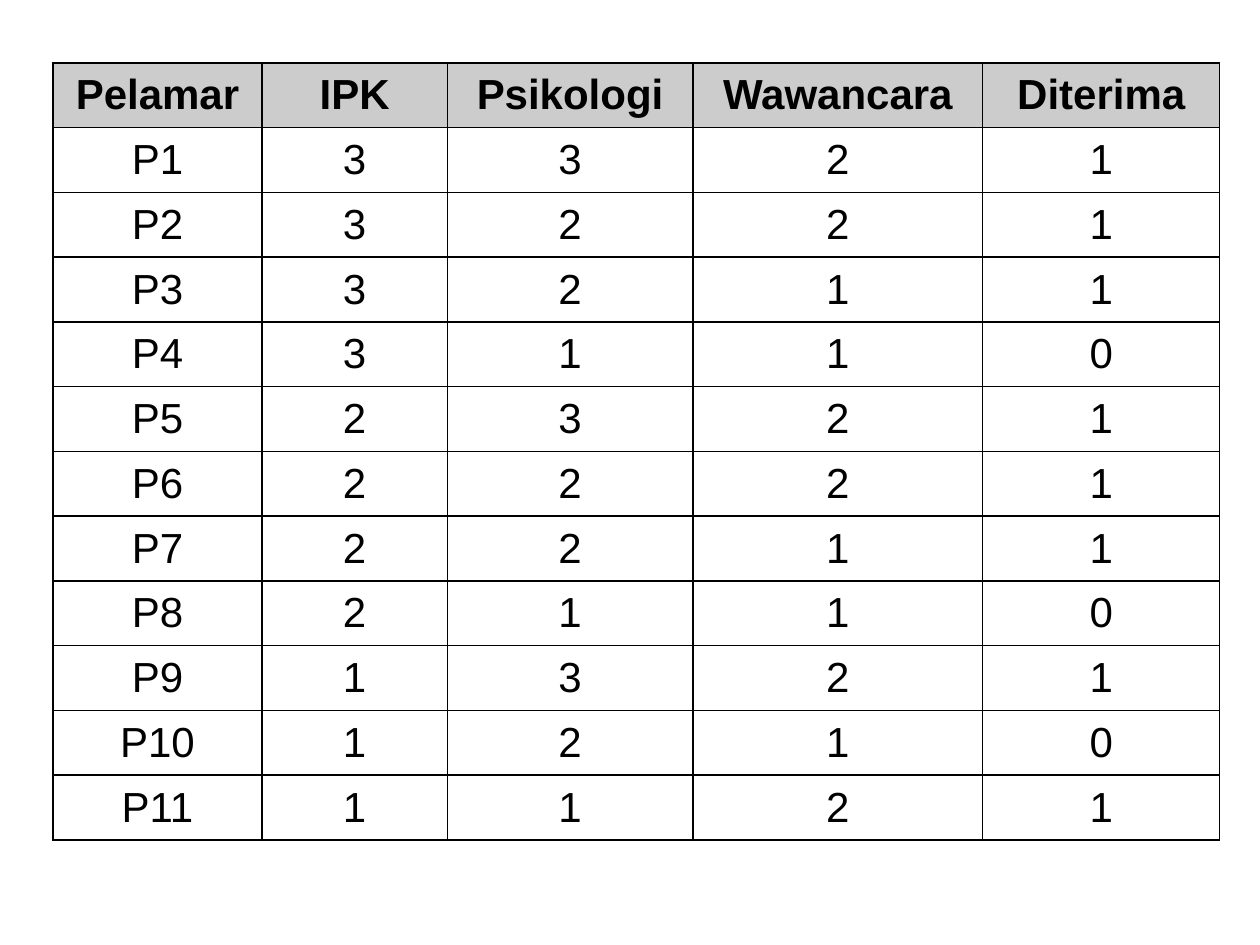
from lxml.etree import SubElement
from pptx import Presentation
from pptx.dml.color import RGBColor
from pptx.enum.text import MSO_ANCHOR, PP_ALIGN
from pptx.oxml.ns import qn
from pptx.util import Inches, Pt

# Content: applicants' scores and the hiring result
HEADER = ("Pelamar", "IPK", "Psikologi", "Wawancara", "Diterima")
SCORES = [
    (3, 3, 2, 1),
    (3, 2, 2, 1),
    (3, 2, 1, 1),
    (3, 1, 1, 0),
    (2, 3, 2, 1),
    (2, 2, 2, 1),
    (2, 2, 1, 1),
    (2, 1, 1, 0),
    (1, 3, 2, 1),
    (1, 2, 1, 0),
    (1, 1, 2, 1),
]
ROWS = [HEADER] + [(f"P{n}", *scores) for n, scores in enumerate(SCORES, 1)]

# Layout in inches
LEFT, TOP, HEIGHT = 0.42, 0.5, 6.17
COL_WIDTHS = (1.66, 1.47, 1.95, 2.3, 1.88)
BLACK, GREY = "000000", "CCCCCC"


def color(value):
    return RGBColor.from_string(value)


def add_borders(cell):
    tc_pr = cell._tc.get_or_add_tcPr()
    for side in ("lnL", "lnR", "lnT", "lnB"):
        ln = SubElement(tc_pr, qn(f"a:{side}"), w=str(Pt(1)))
        fill = SubElement(ln, qn("a:solidFill"))
        SubElement(fill, qn("a:srgbClr"), val=BLACK)


def fill_cell(cell, text, is_header):
    add_borders(cell)
    if is_header:
        cell.fill.solid()
        cell.fill.fore_color.rgb = color(GREY)
    else:
        cell.fill.background()
    cell.vertical_anchor = MSO_ANCHOR.MIDDLE
    cell.margin_left = cell.margin_right = Inches(0.07)
    cell.margin_top = cell.margin_bottom = 0
    p = cell.text_frame.paragraphs[0]
    p.alignment = PP_ALIGN.CENTER
    r = p.add_run()
    r.text = str(text)
    r.font.name = "Arial"
    r.font.size = Pt(24)
    r.font.bold = is_header
    r.font.color.rgb = color(BLACK)


def main():
    prs = Presentation()
    prs.slide_width, prs.slide_height = Inches(10), Inches(7.5)
    slide = prs.slides.add_slide(prs.slide_layouts[6])

    # Table grid: given column widths, equal row heights
    table = slide.shapes.add_table(
        len(ROWS), len(HEADER), Inches(LEFT), Inches(TOP),
        Inches(sum(COL_WIDTHS)), Inches(HEIGHT)).table
    table.horz_banding = False
    for col, width in zip(table.columns, COL_WIDTHS):
        col.width = Inches(width)

    # Cells
    for i, row in enumerate(ROWS):
        table.rows[i].height = Inches(HEIGHT / len(ROWS))
        for j, text in enumerate(row):
            fill_cell(table.cell(i, j), text, is_header=i == 0)

    prs.save("out.pptx")


if __name__ == "__main__":
    main()
